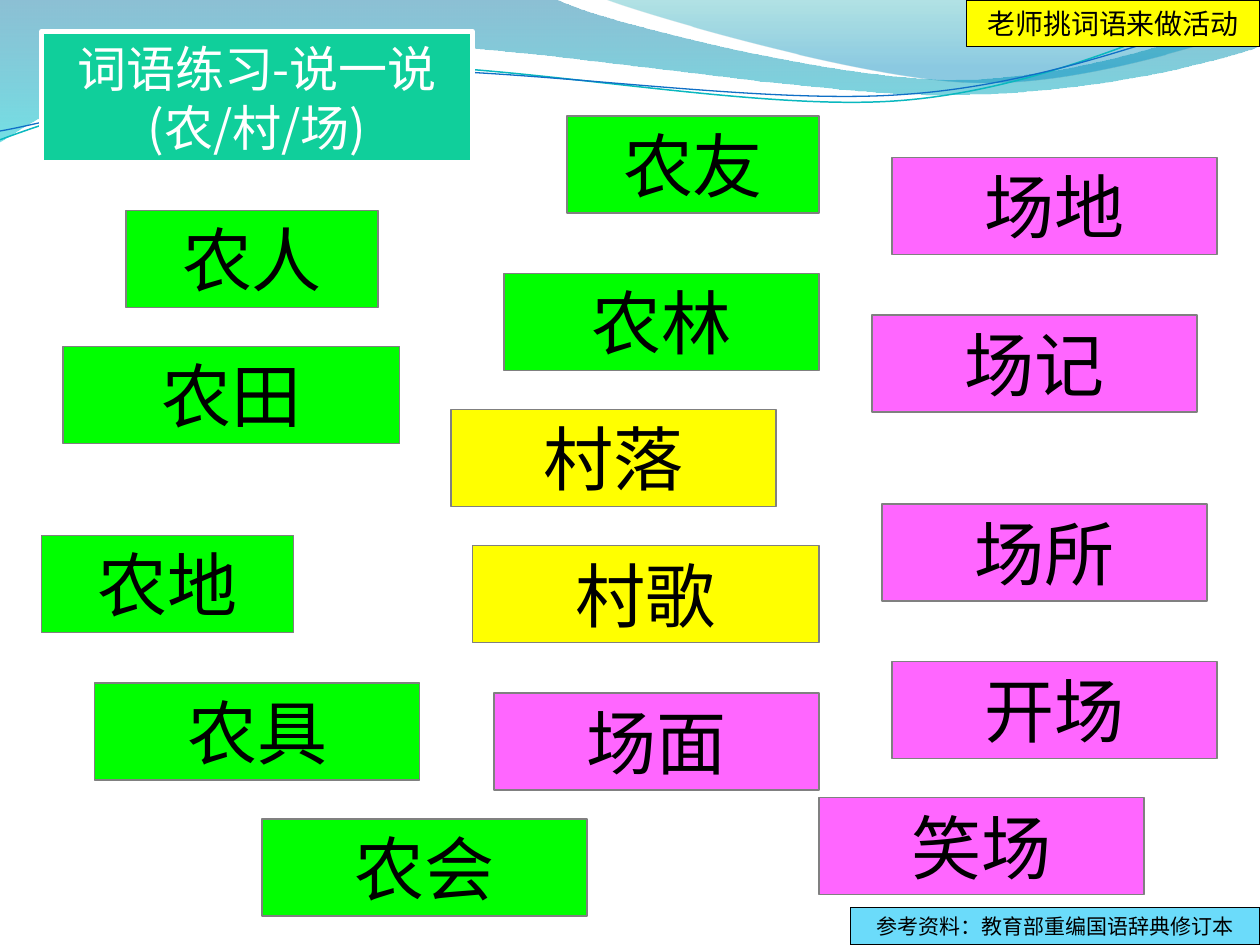
from lxml import etree
from pptx import Presentation
from pptx.dml.color import RGBColor
from pptx.enum.shapes import MSO_SHAPE
from pptx.enum.text import MSO_ANCHOR, PP_ALIGN
from pptx.oxml.ns import qn
from pptx.util import Inches, Pt

RECTANGLE = MSO_SHAPE.RECTANGLE
MIDDLE = MSO_ANCHOR.MIDDLE
CENTER = PP_ALIGN.CENTER
FONT = "Noto Sans CJK SC"

GREEN, YELLOW, PINK = "00FF00", "FFFF00", "FF66FF"
WORD_HEIGHT = 0.77
# Word cards by colour: text, left, top, width
WORDS = {
    GREEN: [
        ("农友", 4.5, 0.92, 2), ("农人", 1, 1.67, 2),
        ("农林", 4, 2.17, 2.5), ("农田", 0.5, 2.75, 2.67),
        ("农地", 0.33, 4.25, 2), ("农具", 0.75, 5.42, 2.58),
        ("农会", 2.08, 6.5, 2.58),
    ],
    YELLOW: [("村落", 3.58, 3.25, 2.58), ("村歌", 3.75, 4.33, 2.75)],
    PINK: [
        ("场地", 7.08, 1.25, 2.58), ("场记", 6.92, 2.5, 2.58),
        ("场所", 7, 4, 2.58), ("开场", 7.08, 5.25, 2.58),
        ("场面", 3.92, 5.5, 2.58), ("笑场", 6.5, 6.33, 2.58),
    ],
}

# Header waves, in inches from the corner of the header box. Each segment is
# a list of points: one for a straight line, three for a Bezier curve.
BROAD_WAVE = [
    [(0, 0)], [(4.4, -0.01)],
    [(4.76, 0.17), (6.64, 0.63), (7.58, 0.63)],
    [(8.53, 0.63), (9.58, 0.26), (10, 0.09)], [(10.01, 0.36)],
    [(9.83, 0.44), (8.7, 0.76), (7.46, 0.75)],
    [(6.22, 0.75), (3.82, 0.28), (2.57, 0.34)],
    [(1.29, 0.36), (0.46, 0.83), (-0.01, 1.13)],
]
RIGHT_WAVE = [
    [(4.79, -0.01)],
    [(5.09, 0.11), (6.82, 0.62), (7.69, 0.65)],
    [(8.56, 0.69), (9.61, 0.32), (10, 0.21)], [(10, 0)],
]
TEAL_LINE = [
    [(0, 1.11)],
    [(0.48, 0.93), (1.58, 0.57), (2.77, 0.52)],
    [(3.95, 0.47), (5.93, 0.89), (7.13, 0.8)],
    [(8.33, 0.71), (9.38, 0.15), (9.98, -0.02)],
]
BLUE_LINE = [
    [(0, 1.04)],
    [(0.47, 0.96), (1.64, 0.61), (2.83, 0.56)],
    [(4.03, 0.51), (5.97, 0.84), (7.17, 0.75)],
    [(8.36, 0.67), (9.41, 0.21), (10, 0.06)],
]


def color(hex_value):
    return RGBColor.from_string(hex_value)


def write_text(shape, text, size, text_color="000000"):
    frame = shape.text_frame
    frame.word_wrap = True
    frame.vertical_anchor = MIDDLE
    paragraph = frame.paragraphs[0]
    paragraph.alignment = CENTER
    run = paragraph.add_run()
    run.text = text
    run.font.name = FONT
    run.font.size = Pt(size)
    run.font.color.rgb = color(text_color)
    properties = run.font._element
    properties.set("lang", "zh-CN")
    latin = properties.find(qn("a:latin"))
    latin.addnext(etree.Element(qn("a:ea"), typeface=FONT))


def paint(shape, fill, line, line_width=0.75):
    shape.shadow.inherit = False
    shape.fill.solid()
    shape.fill.fore_color.rgb = color(fill)
    shape.line.color.rgb = color(line)
    shape.line.width = Pt(line_width)


def add_card(slide, box, text, fill, line="808080", size=40):
    card = slide.shapes.add_shape(RECTANGLE, *map(Inches, box))
    paint(card, fill, line)
    write_text(card, text, size)


def add_curve(slide, left, top, segments, closed):
    anchors = [(Inches(left + x), Inches(top + y)) for x, y in (s[-1] for s in segments)]
    builder = slide.shapes.build_freeform(*anchors[0])
    builder.add_line_segments(anchors[1:], close=closed)
    curve = builder.convert_to_shape()
    curve.shadow.inherit = False
    # Bend the segments that have control points
    lines = list(curve._element.spPr.iter(qn("a:lnTo")))
    for line, segment in zip(lines, segments[1:]):
        if len(segment) == 3:
            bend = etree.Element(qn("a:cubicBezTo"))
            for x, y in segment:
                etree.SubElement(
                    bend, qn("a:pt"),
                    x=str(Inches(left + x) - curve.left), y=str(Inches(top + y) - curve.top),
                )
            line.getparent().replace(line, bend)
    return curve


def add_wave(slide, left, top, segments, stops):
    wave = add_curve(slide, left, top, segments, closed=True)
    wave.line.fill.background()
    wave.fill.gradient()
    wave.fill.gradient_angle = 270
    for stop, (position, hex_value, _) in zip(wave.fill.gradient_stops, stops):
        stop.position = position
        stop.color.rgb = color(hex_value)
    # Opacity of each gradient stop
    for element, (_, _, opacity) in zip(wave._element.spPr.iter(qn("a:srgbClr")), stops):
        etree.SubElement(element, qn("a:alpha"), val=str(opacity * 1000))


def add_wave_line(slide, left, top, segments, hex_value, width):
    curve = add_curve(slide, left, top, segments, closed=False)
    curve.fill.background()
    curve.line.color.rgb = color(hex_value)
    curve.line.width = Pt(width)


def add_header(slide, left, top):
    add_wave(slide, left, top, BROAD_WAVE, [(0, "0074A1", 45), (1, "00C6CF", 55)])
    add_wave(slide, left, top, RIGHT_WAVE, [(0, "00A1A9", 30), (0.8, "008BBF", 45)])
    add_wave_line(slide, left, top, TEAL_LINE, "0AB8BF", 0.85)
    add_wave_line(slide, left, top, BLUE_LINE, "0F6FC6", 0.75)


def place_title(slide, box, text):
    title = slide.shapes.title
    title.left, title.top, title.width, title.height = map(Inches, box)
    paint(title, "10CF9B", "FFFFFF", line_width=3)
    write_text(title, text, 28, text_color="FFFFFF")
    # Bring the title in front of the waves
    slide.shapes._spTree.append(title._element)


def add_words(slide, height):
    for fill, words in WORDS.items():
        for text, left, top, width in words:
            add_card(slide, (left, top, width, height), text, fill)


def main():
    presentation = Presentation()
    presentation.slide_width = Inches(10)
    presentation.slide_height = Inches(7.5)
    slide = presentation.slides.add_slide(presentation.slide_layouts[5])

    add_header(slide, 0, 0)
    place_title(slide, (0.33, 0.25, 3.42, 1.04), "词语练习-说一说(农/村/场)")
    add_words(slide, WORD_HEIGHT)
    # Source and teacher notes in the corners
    add_card(slide, (6.75, 7.2, 3.25, 0.3), "参考资料：教育部重编国语辞典修订本",
             "6BDBFA", line="000000", size=12)
    add_card(slide, (7.67, 0, 2.33, 0.37), "老师挑词语来做活动",
             YELLOW, line="000000", size=16)
    presentation.save("out.pptx")


if __name__ == "__main__":
    main()
